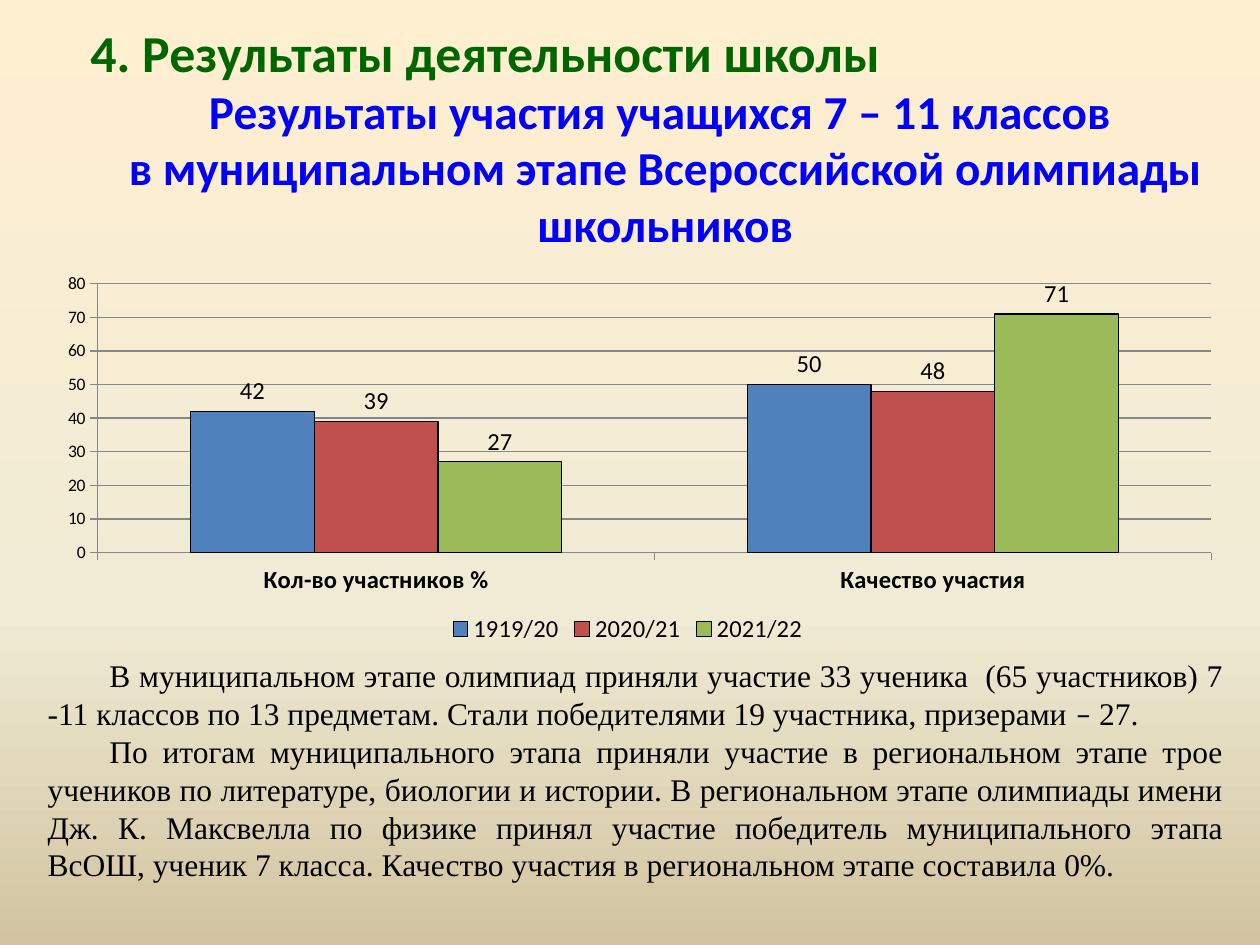
import copy
from dataclasses import dataclass

import pptx
import pptx.chart.data
import pptx.dml.color
import pptx.enum.chart
import pptx.enum.text
import pptx.oxml
import pptx.oxml.ns
import pptx.util
from pptx.util import Inches

HUES = {
    "top": "FFEFD1", "mid": "F0EBD5", "low": "D1C39F",
    "head": "006600", "title": "0000FF", "text": "000000", "grid": "878787",
    "blue": "4F81BD", "red": "C0504D", "green": "9BBB59",
}
ALIGN = pptx.enum.text.PP_ALIGN
ANCHOR = pptx.enum.text.MSO_ANCHOR


@dataclass
class Block:
    """A text box whose paragraphs share one look; a paragraph is a list of (text, font) runs."""
    box: tuple
    paras: list
    font: str
    size: float
    hue: str
    bold: bool = False
    align: ALIGN = ALIGN.LEFT
    anchor: ANCHOR = ANCHOR.MIDDLE
    indent: float = 0
    space: float = 1


@dataclass
class Year:
    name: str
    vals: tuple
    hue: str


def color(name: str) -> pptx.dml.color.RGBColor:
    return pptx.dml.color.RGBColor.from_string(HUES[name])


def style(font, size: float, hue: str = "text", face: str = "Calibri", bold: bool = False) -> None:
    font.name, font.size, font.bold = face, pptx.util.Pt(size), bold
    font.color.rgb = color(hue)


def paint(slide) -> None:
    """Fill the background with a three-stop vertical gradient."""
    fill = slide.background.fill
    fill.gradient()
    fill.gradient_angle = 270
    stops = slide.element.find(".//" + pptx.oxml.ns.qn("a:gsLst"))
    stops.append(copy.deepcopy(stops[-1]))
    for stop, (place, hue) in zip(fill.gradient_stops, ((0, "top"), (0.65, "mid"), (1, "low"))):
        stop.position = place
        stop.color.rgb = color(hue)


def write(slide, block: Block) -> None:
    frame = slide.shapes.add_textbox(*map(Inches, block.box)).text_frame
    frame.word_wrap = True
    frame.vertical_anchor = block.anchor
    for i, runs in enumerate(block.paras):
        para = frame.add_paragraph() if i else frame.paragraphs[0]
        para.alignment = block.align
        para.line_spacing = block.space
        if block.indent:
            para._p.get_or_add_pPr().set("indent", str(Inches(block.indent)))
        style(para.font, block.size, block.hue, block.font, block.bold)
        for j, (text, face) in enumerate(runs):
            for k, line in enumerate(text.split("\n")):
                if k:
                    para.add_line_break()
                run = para.add_run()
                run.text = line
                style(run.font, block.size, block.hue, face or block.font, block.bold)


def place(chart, x: float, y: float, w: float, h: float) -> None:
    """Fix the inner plot area, in parts of the chart's size."""
    area = chart._chartSpace.chart.plotArea
    old = area.find(pptx.oxml.ns.qn("c:layout"))
    if old is not None:
        area.remove(old)
    area.insert(0, pptx.oxml.parse_xml(
        f'<c:layout {pptx.oxml.ns.nsdecls("c")}><c:manualLayout>'
        '<c:layoutTarget val="inner"/><c:xMode val="edge"/><c:yMode val="edge"/>'
        f'<c:x val="{x}"/><c:y val="{y}"/><c:w val="{w}"/><c:h val="{h}"/>'
        '</c:manualLayout></c:layout>'))


def plot(slide, box: tuple, cats: list[str], years: list[Year]) -> None:
    kinds = pptx.enum.chart
    data = pptx.chart.data.CategoryChartData()
    data.categories = cats
    for year in years:
        data.add_series(year.name, year.vals)
    chart = slide.shapes.add_chart(
        kinds.XL_CHART_TYPE.COLUMN_CLUSTERED, *map(Inches, box), data).chart
    chart.has_title = False
    style(chart.font, 10)
    place(chart, 0.046, 0.097, 0.954, 0.665)

    # Axes
    for axis in (chart.category_axis, chart.value_axis):
        axis.major_tick_mark = kinds.XL_TICK_MARK.OUTSIDE
        axis.format.line.color.rgb = color("grid")
    style(chart.category_axis.tick_labels.font, 14, bold=True)
    scale = chart.value_axis
    scale.minimum_scale, scale.maximum_scale, scale.major_unit = 0, 80, 10
    scale.has_major_gridlines = True
    scale.major_gridlines.format.line.color.rgb = color("grid")

    # Legend
    chart.has_legend = True
    chart.legend.position = kinds.XL_LEGEND_POSITION.BOTTOM
    chart.legend.include_in_layout = False
    style(chart.legend.font, 14)

    # Columns
    bars = chart.plots[0]
    bars.gap_width, bars.overlap, bars.vary_by_categories = 150, 0, False
    for year, row in zip(years, bars.series):
        row.format.fill.solid()
        row.format.fill.fore_color.rgb = color(year.hue)
        row.format.line.color.rgb = color("text")
        row.format.line.width = pptx.util.Pt(0.75)
        tags = row.data_labels
        tags.show_value = True
        tags.position = kinds.XL_LABEL_POSITION.OUTSIDE_END
        style(tags.font, 14)


BLOCKS = [
    Block((0.78, 0.78, 9, 1.09),
          [[("Результаты участия учащихся 7 – 11 классов \n"
             "в муниципальном этапе Всероссийской олимпиады школьников", None)]],
          "Calibri", 27, "title", bold=True, align=ALIGN.CENTER),
    Block((0.28, 5.16, 9.53, 2.22),
          [[("В муниципальном этапе олимпиад приняли участие 33 ученика  (65 участников) 7 -11 "
             "классов по 13 предметам. Стали победителями 19 участника, призерами ", None),
            ("–", "Calibri"), (" 27.", None)],
           [("По итогам муниципального этапа приняли участие в региональном этапе трое учеников "
             "по литературе, биологии и истории. В региональном этапе олимпиады имени "
             "Дж. К. Максвелла по физике принял участие победитель муниципального этапа ВсОШ, "
             "ученик 7 класса. Качество участия в региональном этапе составила 0%.", None)]],
          "Times New Roman", 18, "text", align=ALIGN.JUSTIFY, anchor=ANCHOR.TOP, indent=0.49),
    Block((0.62, 0.16, 9, 0.56), [[("4. Результаты деятельности школы", None)]],
          "Calibri", 29.6, "head", bold=True, space=0.9),
]
YEARS = [
    Year("1919/20", (42, 50), "blue"),
    Year("2020/21", (39, 48), "red"),
    Year("2021/22", (27, 71), "green"),
]


def main() -> None:
    deck = pptx.Presentation()
    deck.slide_width, deck.slide_height = Inches(10), Inches(7.5)
    slide = deck.slides.add_slide(deck.slide_layouts[6])
    paint(slide)
    for block in BLOCKS:
        write(slide, block)
    plot(slide, (0.35, 1.94, 9.27, 3.21), ["Кол-во участников %", "Качество участия"], YEARS)
    deck.save("out.pptx")


if __name__ == "__main__":
    main()
